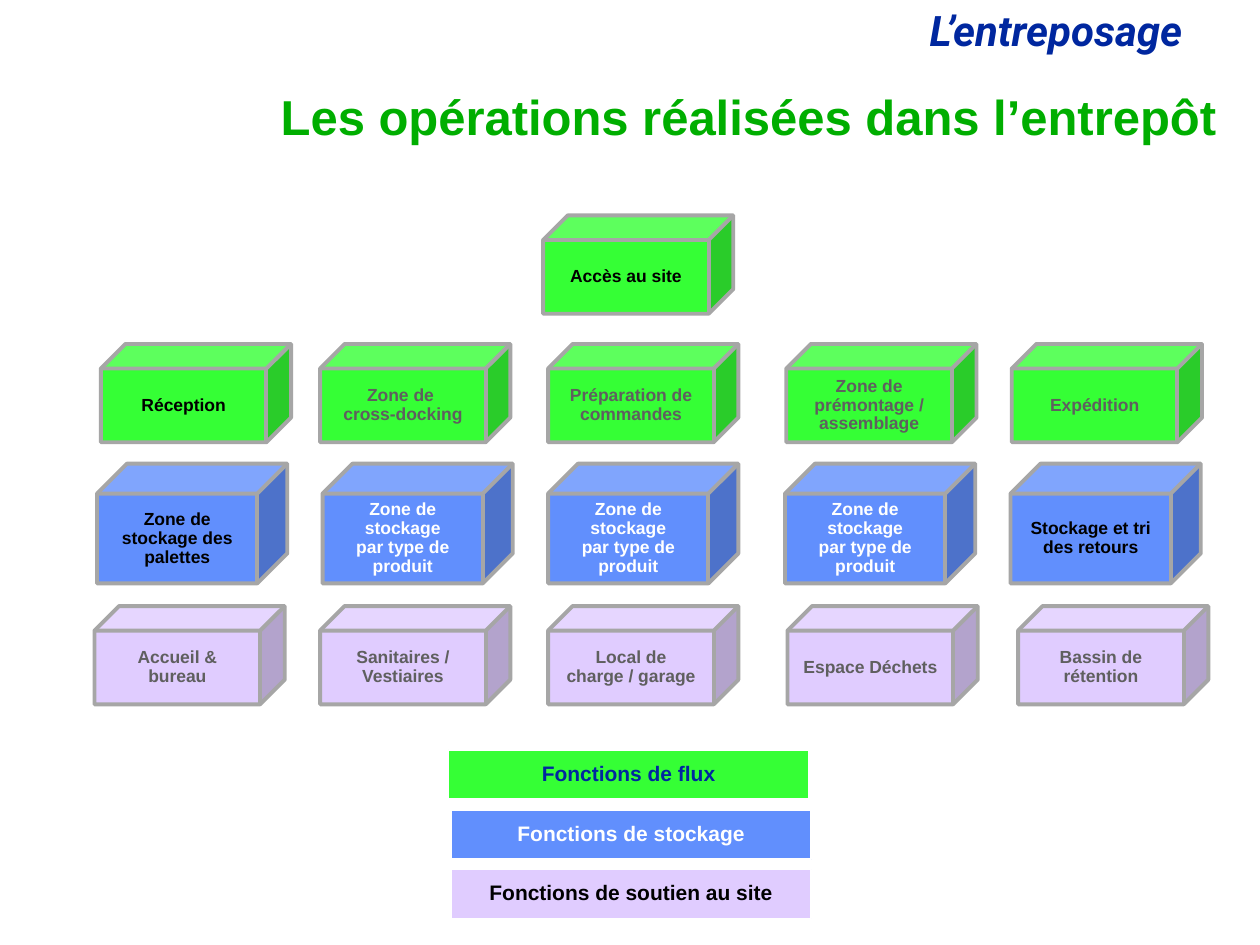
import pptx
import pptx.dml.color
import pptx.enum.shapes
import pptx.enum.text
import pptx.util

GREEN, BLUE, LILAC = "35FF35", "618FFD", "E0CCFF"
BLACK, WHITE, GREY, NAVY = "000000", "FFFFFF", "5F5F5F", "00279F"
TITLE_GREEN, EDGE = "00AE00", "A6A6A6"
STORAGE = "Zone de stockage\npar type de produit"

ZONES = [
    (17.1, 7.8, GREEN, [(43.1, "Accès au site", BLACK)]),
    (27.3, 7.8, GREEN, [
        (8, "Réception", BLACK),
        (25.4, "Zone de \ncross-docking", GREY),
        (43.5, "Préparation de commandes", GREY),
        (62.4, "Zone de prémontage / assemblage", GREY),
        (80.3, "Expédition", GREY),
    ]),
    (36.8, 9.5, BLUE, [
        (7.7, "Zone de stockage des palettes", BLACK),
        (25.6, STORAGE, WHITE),
        (43.5, STORAGE, WHITE),
        (62.3, STORAGE, WHITE),
        (80.2, "Stockage et tri des retours", BLACK),
    ]),
    (48.1, 7.8, LILAC, [
        (7.5, "Accueil & bureau", GREY),
        (25.4, "Sanitaires / Vestiaires", GREY),
        (43.5, "Local de charge / garage", GREY),
        (62.5, "Espace Déchets", GREY),
        (80.8, "Bassin de rétention", GREY),
    ]),
]

LEGEND = [
    (35.6, 59.5, "Fonctions de flux", GREEN, NAVY),
    (35.8, 64.3, "Fonctions de stockage", BLUE, WHITE),
    (35.8, 69, "Fonctions de soutien au site", LILAC, BLACK),
]


def color(value):
    return pptx.dml.color.RGBColor.from_string(value)


class SlideBuilder:
    columns, rows = 100, 75
    font_name = "Arial"
    line_spacing = 0.9

    def __init__(self, presentation):
        self.column = presentation.slide_width / self.columns
        self.row = presentation.slide_height / self.rows
        self.slide = presentation.slides.add_slide(presentation.slide_layouts[6])

    def place(self, left, top, width, height):
        return (round(left * self.column), round(top * self.row),
                round(width * self.column), round(height * self.row))

    def label(self, shape, text, size, text_color,
              align=pptx.enum.text.PP_ALIGN.CENTER,
              anchor=pptx.enum.text.MSO_ANCHOR.MIDDLE,
              font_name=None, italic=False):
        frame = shape.text_frame
        frame.word_wrap = True
        frame.vertical_anchor = anchor
        paragraph = frame.paragraphs[0]
        paragraph.text = text
        paragraph.alignment = align
        paragraph.line_spacing = self.line_spacing
        font = paragraph.font
        font.name = font_name or self.font_name
        font.size = pptx.util.Pt(size)
        font.bold = True
        font.italic = italic
        font.color.rgb = color(text_color)

    def text(self, box, text, size, text_color, **style):
        shape = self.slide.shapes.add_textbox(*self.place(*box))
        self.label(shape, text, size, text_color, **style)

    def block(self, kind, box, text, size, text_color, fill, line, line_width):
        shape = self.slide.shapes.add_shape(kind, *self.place(*box))
        shape.shadow.inherit = False
        shape.fill.solid()
        shape.fill.fore_color.rgb = color(fill)
        shape.line.color.rgb = color(line)
        shape.line.width = pptx.util.Pt(line_width)
        self.label(shape, text, size, text_color)

    def cube(self, box, text, text_color, fill):
        self.block(pptx.enum.shapes.MSO_SHAPE.CUBE, box, text, 10, text_color, fill, EDGE, 2.25)

    def legend(self, box, text, text_color, fill):
        self.block(pptx.enum.shapes.MSO_SHAPE.RECTANGLE, box, text, 12, text_color, fill, WHITE, 1)


def main():
    presentation = pptx.Presentation()
    presentation.slide_width = pptx.util.Inches(10)
    presentation.slide_height = pptx.util.Inches(7.5)
    builder = SlideBuilder(presentation)

    builder.text((72.8, 0.3, 47.5, 4.6), "L’entreposage", 24, NAVY,
                 align=pptx.enum.text.PP_ALIGN.LEFT,
                 anchor=pptx.enum.text.MSO_ANCHOR.TOP,
                 font_name="Roboto", italic=True)
    builder.text((3.8, 5.6, 93.7, 7.8), "Les opérations réalisées dans l’entrepôt",
                 28, TITLE_GREEN, align=pptx.enum.text.PP_ALIGN.RIGHT)

    for left, top, text, fill, text_color in LEGEND:
        builder.legend((left, top, 28.6, 3.9), text, text_color, fill)

    for top, height, fill, cubes in ZONES:
        for left, text, text_color in cubes:
            builder.cube((left, top, 15.1, height), text, text_color, fill)

    presentation.save("out.pptx")


if __name__ == "__main__":
    main()
